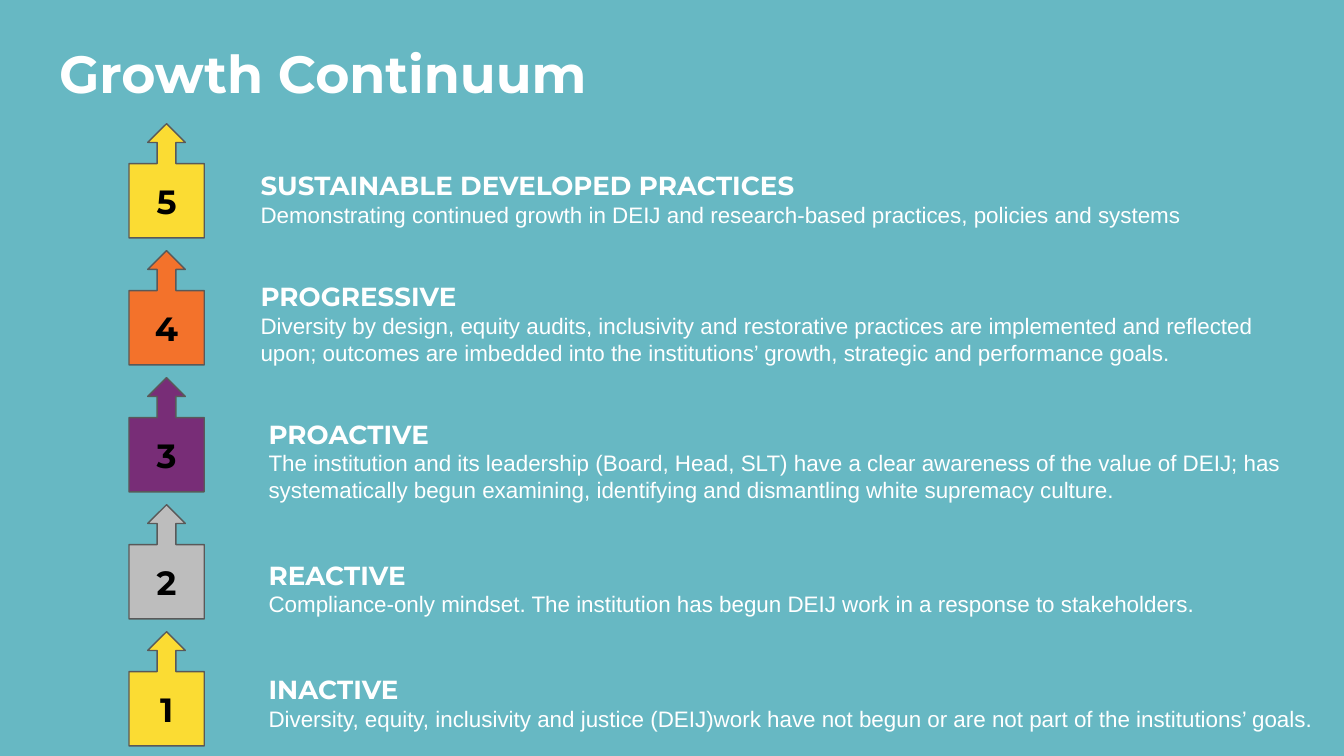
from pptx import Presentation
from pptx.dml.color import RGBColor
from pptx.enum.shapes import MSO_SHAPE
from pptx.enum.text import MSO_ANCHOR, MSO_AUTO_SIZE, PP_ALIGN
from pptx.util import Inches, Pt

COLORS = {
    "background": "67B8C3", "text": "FFFFFF", "number": "000000",
    "outline": "595959", "yellow": "FBDC33", "orange": "F3722B",
    "purple": "782D77", "gray": "BDBDBD",
}
TITLE = "Growth Continuum"
# number, color, heading, description, (left, top, width, height) of the text
LEVELS = [
    (5, "yellow", "SUSTAINABLE DEVELOPED PRACTICES",
     "Demonstrating continued growth in DEIJ and research-based practices, "
     "policies and systems", (1.84, 1.16, 7.82, 0.64)),
    (4, "orange", "PROGRESSIVE",
     "Diversity by design, equity audits, inclusivity and restorative practices "
     "are implemented and reflected upon; outcomes are imbedded into the "
     "institutions’ growth, strategic and performance goals.",
     (1.84, 1.99, 7.82, 0.84)),
    (3, "purple", "PROACTIVE",
     "The institution and its leadership (Board, Head, SLT) have a clear "
     "awareness of the value of DEIJ; has systematically begun examining, "
     "identifying and dismantling white supremacy culture.",
     (1.9, 3.01, 7.82, 0.84)),
    (2, "gray", "REACTIVE",
     "Compliance-only mindset. The institution has begun DEIJ work in a response "
     "to stakeholders.", (1.9, 4.06, 7.82, 0.64)),
    (1, "yellow", "INACTIVE",
     "Diversity, equity, inclusivity and justice (DEIJ)work have not begun or "
     "are not part of the institutions’ goals.", (1.9, 4.91, 8.1, 0.64)),
]
SLIDE_WIDTH = Inches(10)
SLIDE_HEIGHT = SLIDE_WIDTH * 9 // 16
STEP_LEFT, STEP_WIDTH, STEP_HEIGHT = 0.96, 0.56, 0.85
FIRST_STEP_TOP, LAST_STEP_TOP = 0.92, 4.7
STEP_PITCH = (LAST_STEP_TOP - FIRST_STEP_TOP) / (len(LEVELS) - 1)
CALLOUT_ADJUSTMENTS = (0.25, 0.25, 0.25, 0.65)
HEADING = {"name": "Montserrat", "size": Pt(14), "bold": True}
DESCRIPTION = {"name": "Arial", "size": Pt(12), "bold": False}


def rgb(name):
    return RGBColor.from_string(COLORS[name])


def set_frame(frame, anchor):
    settings = {"word_wrap": True, "auto_size": MSO_AUTO_SIZE.NONE,
                "vertical_anchor": anchor}
    for side in ("left", "right", "top", "bottom"):
        settings[f"margin_{side}"] = Inches(0.1)
    for key, value in settings.items():
        setattr(frame, key, value)


def write(paragraph, text, style, color="text", align=PP_ALIGN.LEFT):
    paragraph.alignment = align
    run = paragraph.add_run()
    run.text = text
    for key, value in style.items():
        setattr(run.font, key, value)
    run.font.color.rgb = rgb(color)


def add_step(slide, row, number, color):
    step = slide.shapes.add_shape(
        MSO_SHAPE.UP_ARROW_CALLOUT, Inches(STEP_LEFT),
        Inches(FIRST_STEP_TOP + row * STEP_PITCH),
        Inches(STEP_WIDTH), Inches(STEP_HEIGHT))
    for index, value in enumerate(CALLOUT_ADJUSTMENTS):
        step.adjustments[index] = value
    step.shadow.inherit = False
    step.fill.solid()
    step.fill.fore_color.rgb = rgb(color)
    step.line.color.rgb = rgb("outline")
    step.line.width = Pt(0.75)
    set_frame(step.text_frame, MSO_ANCHOR.MIDDLE)
    write(step.text_frame.paragraphs[0], str(number), HEADING | {"size": Pt(18)},
          "number", PP_ALIGN.CENTER)


def add_level_text(slide, heading, description, box):
    frame = slide.shapes.add_textbox(*map(Inches, box)).text_frame
    set_frame(frame, MSO_ANCHOR.TOP)
    frame.auto_size = MSO_AUTO_SIZE.SHAPE_TO_FIT_TEXT
    write(frame.paragraphs[0], heading, HEADING)
    write(frame.add_paragraph(), description, DESCRIPTION)


def main():
    deck = Presentation()
    deck.slide_width, deck.slide_height = SLIDE_WIDTH, SLIDE_HEIGHT
    slide = deck.slides.add_slide(deck.slide_layouts.get_by_name("Title Only"))
    slide.background.fill.solid()
    slide.background.fill.fore_color.rgb = rgb("background")

    title = slide.shapes.title
    title.left, title.top, title.width, title.height = map(
        Inches, (0.34, 0.21, 9.32, 0.63))
    set_frame(title.text_frame, MSO_ANCHOR.TOP)
    write(title.text_frame.paragraphs[0], TITLE, HEADING | {"size": Pt(28)})

    for row, (number, color, heading, description, box) in enumerate(LEVELS):
        add_step(slide, row, number, color)
        add_level_text(slide, heading, description, box)
    deck.save("out.pptx")


if __name__ == "__main__":
    main()
